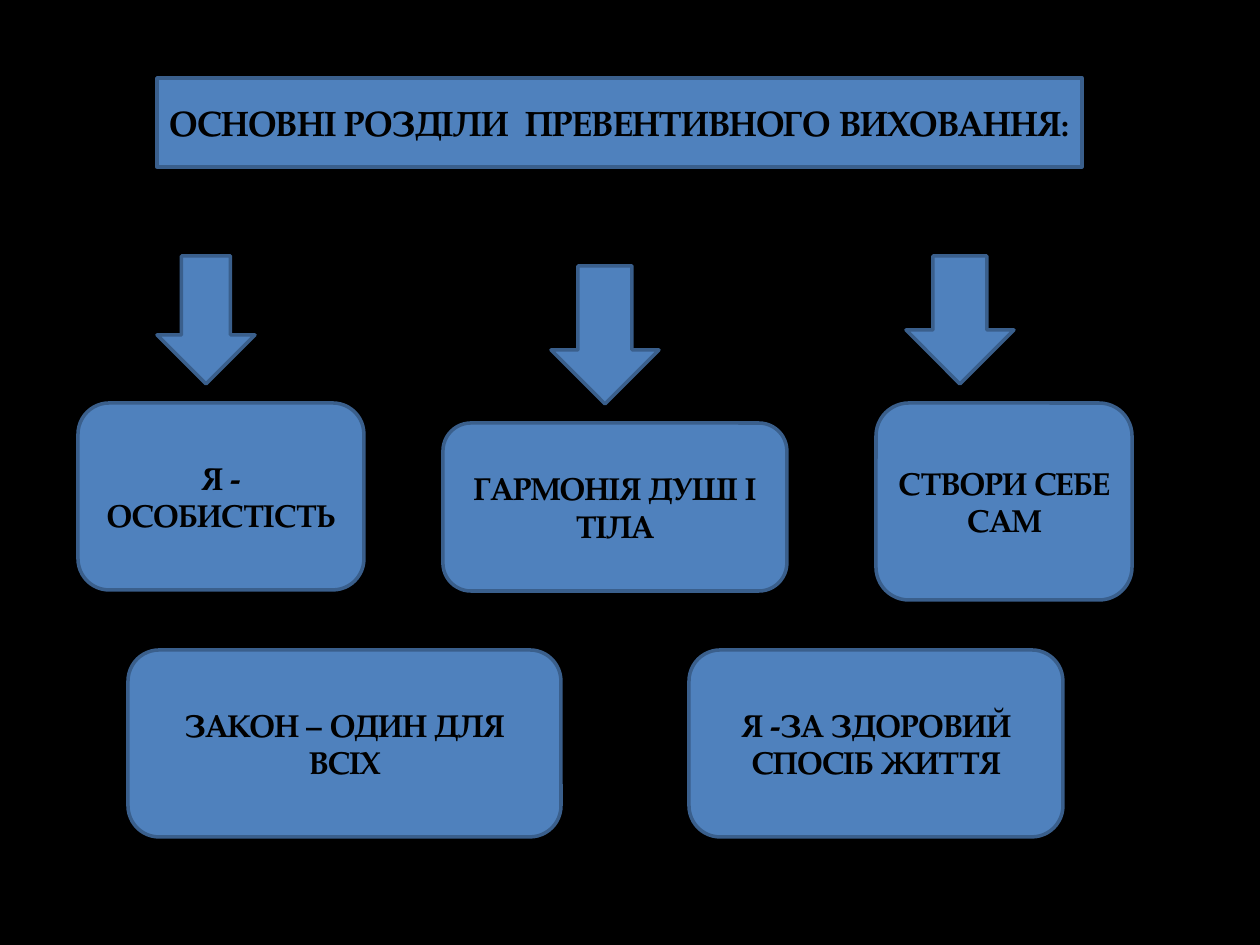
import pptx
import pptx.dml.color
import pptx.enum.shapes
import pptx.enum.text
import pptx.util

PX = 914400 // 126
FONT = "TeX Gyre Pagella"
BLACK, BLUE, DARK_BLUE = "000000", "4F81BD", "3A5F8C"
KINDS = pptx.enum.shapes.MSO_SHAPE

# Places are left, top, width, height in px
ARROWS = [
    (157, 256, 98, 128),
    (551, 266, 108, 138),
    (906, 256, 108, 128),
]

# Each paragraph is a list of (text, size in points) runs
HEADING = (
    (157, 78, 925, 89),
    [[("ОСНОВНІ РОЗДІЛИ  ПРЕВЕНТИВНОГО ВИХОВАННЯ", 20), (": ", 18)]],
)
SECTIONS = [
    ((78, 403, 286, 187), [[("Я -", 18)], [("ОСОБИСТІСТЬ", 18)]]),
    ((443, 423, 344, 168), [[("ГАРМОНІЯ ДУШІ І ТІЛА", 18)]]),
    ((876, 403, 256, 197), [[("СТВОРИ СЕБЕ САМ", 18)]]),
    ((128, 650, 433, 187), [[("ЗАКОН – ОДИН ДЛЯ ВСІХ", 18)]]),
    ((689, 650, 374, 187), [[("Я -ЗА ЗДОРОВИЙ СПОСІБ ЖИТТЯ", 18)]]),
]


def color(value):
    return pptx.dml.color.RGBColor.from_string(value)


def add_block(slide, kind, place, paragraphs=()):
    """Add a blue outlined shape with centred bold text."""
    block = slide.shapes.add_shape(kind, *(length * PX for length in place))
    block.shadow.inherit = False
    block.fill.solid()
    block.fill.fore_color.rgb = color(BLUE)
    block.line.color.rgb = color(DARK_BLUE)
    block.line.width = pptx.util.Pt(2)

    frame = block.text_frame
    frame.word_wrap = True
    frame.vertical_anchor = pptx.enum.text.MSO_ANCHOR.MIDDLE
    for index, runs in enumerate(paragraphs):
        paragraph = frame.add_paragraph() if index else frame.paragraphs[0]
        paragraph.alignment = pptx.enum.text.PP_ALIGN.CENTER
        for text, size in runs:
            run = paragraph.add_run()
            run.text = text
            run.font.name = FONT
            run.font.size = pptx.util.Pt(size)
            run.font.bold = True
            run.font.color.rgb = color(BLACK)


def main():
    deck = pptx.Presentation()
    deck.slide_width = 1260 * PX
    deck.slide_height = 945 * PX
    slide = deck.slides.add_slide(deck.slide_layouts[6])
    slide.background.fill.solid()
    slide.background.fill.fore_color.rgb = color(BLACK)

    for place in ARROWS:
        add_block(slide, KINDS.DOWN_ARROW, place)
    add_block(slide, KINDS.RECTANGLE, *HEADING)
    for place, paragraphs in SECTIONS:
        add_block(slide, KINDS.ROUNDED_RECTANGLE, place, paragraphs)

    deck.save("out.pptx")


if __name__ == "__main__":
    main()
